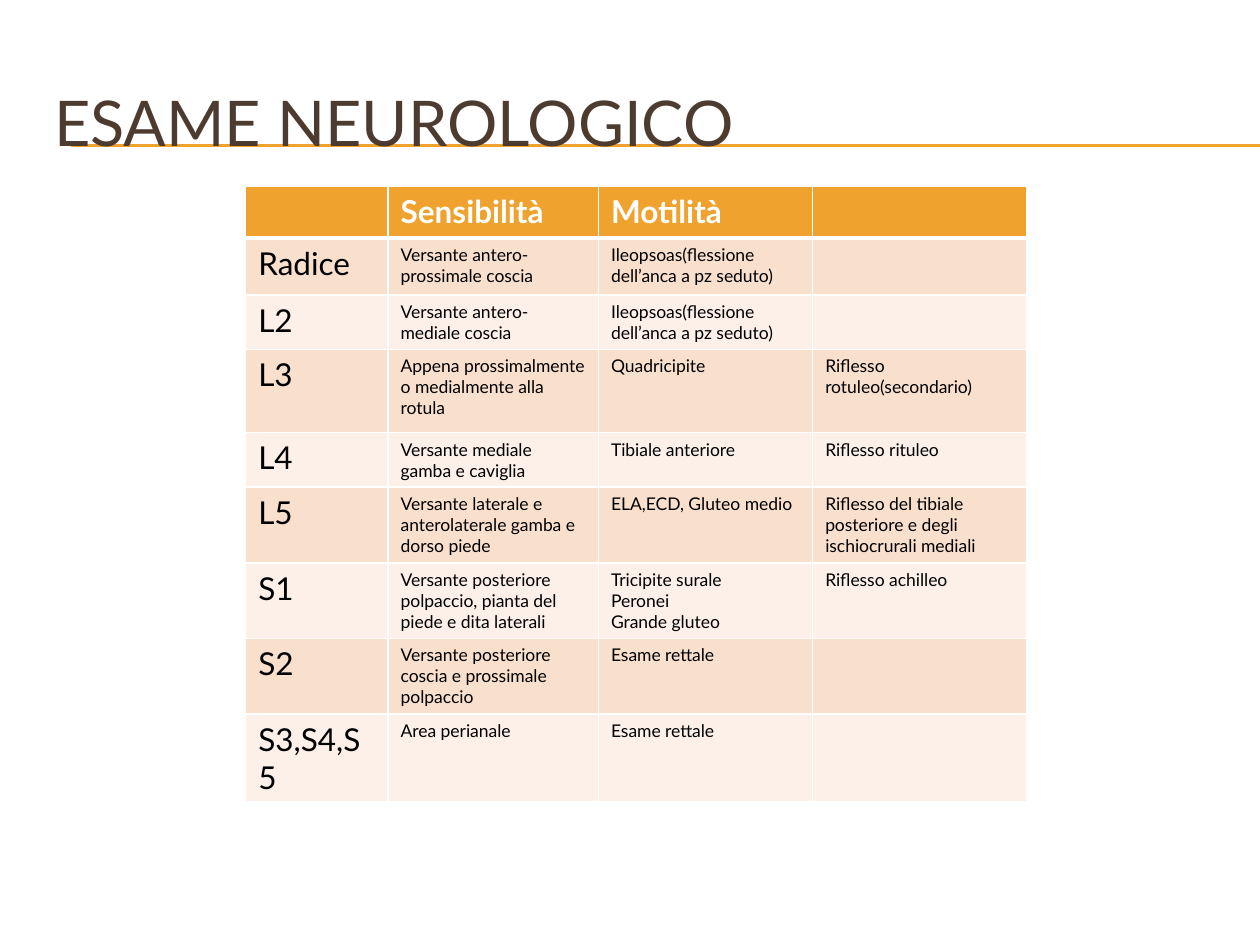
import pptx
import pptx.util
import pptx.dml.color
import pptx.enum.shapes
import pptx.enum.text
import pptx.oxml.ns
from lxml import etree

Inches = pptx.util.Inches
Pt = pptx.util.Pt
RGBColor = pptx.dml.color.RGBColor

ORANGE = RGBColor(0xF0, 0xA2, 0x2E)
BROWN = RGBColor(0x4E, 0x3B, 0x30)
PEACH = RGBColor(0xF9, 0xE0, 0xCD)
CREAM = RGBColor(0xFC, 0xF0, 0xE8)
WHITE = RGBColor(0xFF, 0xFF, 0xFF)
BLACK = RGBColor(0, 0, 0)

COLUMN_WIDTHS = [1.13, 1.67, 1.7, 1.7]
ROW_HEIGHTS = [0.41, 0.45, 0.41, 0.66, 0.41, 0.41, 0.41, 0.39, 0.41]
EXAM = [
    ["", "Sensibilità", "Motilità", ""],
    ["Radice", "Versante antero- prossimale coscia",
     "Ileopsoas(flessione dell’anca a pz seduto)", ""],
    ["L2", "Versante antero-mediale coscia",
     "Ileopsoas(flessione dell’anca a pz seduto)", ""],
    ["L3", "Appena prossimalmente o medialmente alla rotula",
     "Quadricipite", "Riflesso rotuleo(secondario)"],
    ["L4", "Versante mediale gamba e caviglia",
     "Tibiale anteriore", "Riflesso rituleo"],
    ["L5", "Versante laterale e anterolaterale gamba e dorso piede",
     "ELA,ECD, Gluteo medio",
     "Riflesso del tibiale posteriore e degli ischiocrurali mediali"],
    ["S1", "Versante posteriore polpaccio, pianta del piede e dita laterali",
     "Tricipite surale\nPeronei\nGrande gluteo", "Riflesso achilleo"],
    ["S2", "Versante posteriore coscia e prossimale polpaccio",
     "Esame rettale", ""],
    ["S3,S4,S5", "Area perianale", "Esame rettale", ""],
]


class SlideWriter:
    font_name = "Lato"
    formats = {
        "title": {"size": Pt(36), "bold": False, "color": BROWN},
        "header": {"size": Pt(18), "bold": True, "color": WHITE},
        "root": {"size": Pt(18), "bold": False, "color": BLACK},
        "finding": {"size": Pt(10), "bold": False, "color": BLACK},
    }

    def __init__(self, slide):
        self.slide = slide

    def format_text(self, frame, role):
        for paragraph in frame.paragraphs:
            for run in paragraph.runs:
                run.font.name = self.font_name
                for name, value in self.formats[role].items():
                    if name == "color":
                        run.font.color.rgb = value
                    else:
                        setattr(run.font, name, value)

    def title(self, text, left, top, width, height):
        heading = self.slide.shapes.title
        place = {"left": left, "top": top, "width": width, "height": height}
        for name, value in place.items():
            setattr(heading, name, Inches(value))
        frame = heading.text_frame
        frame.text = text
        layout = {"word_wrap": True,
                  "auto_size": pptx.enum.text.MSO_AUTO_SIZE.NONE,
                  "vertical_anchor": pptx.enum.text.MSO_ANCHOR.MIDDLE}
        for name, value in layout.items():
            setattr(frame, name, value)
        frame.paragraphs[0].alignment = pptx.enum.text.PP_ALIGN.LEFT
        self.format_text(frame, "title")

    def rule_behind_title(self, left, right, y):
        rule = self.slide.shapes.add_connector(
            pptx.enum.shapes.MSO_CONNECTOR.STRAIGHT,
            Inches(left), Inches(y), Inches(right), Inches(y))
        rule.line.color.rgb = ORANGE
        rule.line.width = Pt(0.75)
        etree.SubElement(rule.element.spPr, pptx.oxml.ns.qn("a:effectLst"))
        self.slide.shapes.title.element.addprevious(rule.element)

    def borders(self, cell, widths):
        properties = cell._tc.get_or_add_tcPr()
        for side, width in widths.items():
            edge = etree.SubElement(properties, pptx.oxml.ns.qn(f"a:ln{side}"),
                                    w=str(Pt(width)))
            fill = etree.SubElement(edge, pptx.oxml.ns.qn("a:solidFill"))
            etree.SubElement(fill, pptx.oxml.ns.qn("a:srgbClr"), val=str(WHITE))

    def table(self, rows, left, top, widths, heights):
        table = self.slide.shapes.add_table(
            len(rows), len(widths), Inches(left), Inches(top),
            Inches(sum(widths)), Inches(sum(heights))).table
        for column, width in zip(table.columns, widths):
            column.width = Inches(width)
        for r, (row, height) in enumerate(zip(rows, heights)):
            table.rows[r].height = Inches(height)
            background = ORANGE if r == 0 else PEACH if r % 2 else CREAM
            edges = {"L": 1, "R": 1, "T": 3 if r == 1 else 1,
                     "B": 3 if r == 0 else 1}
            for c, text in enumerate(row):
                cell = table.cell(r, c)
                self.borders(cell, edges)
                cell.fill.solid()
                cell.fill.fore_color.rgb = background
                if text:
                    cell.text_frame.text = text
                    role = "header" if r == 0 else "finding" if c else "root"
                    self.format_text(cell.text_frame, role)


def main():
    presentation = pptx.Presentation()
    presentation.slide_width = Inches(10)
    presentation.slide_height = Inches(7.5)
    slide = presentation.slides.add_slide(presentation.slide_layouts[5])
    writer = SlideWriter(slide)
    writer.title("ESAME NEUROLOGICO", 0.33, 0.5, 9.5, 0.92)
    for y in (1.15, 1.16):
        writer.rule_behind_title(0.56, 10, y)
    writer.table(EXAM, 1.95, 1.48, COLUMN_WIDTHS, ROW_HEIGHTS)
    presentation.save("out.pptx")


if __name__ == "__main__":
    main()
